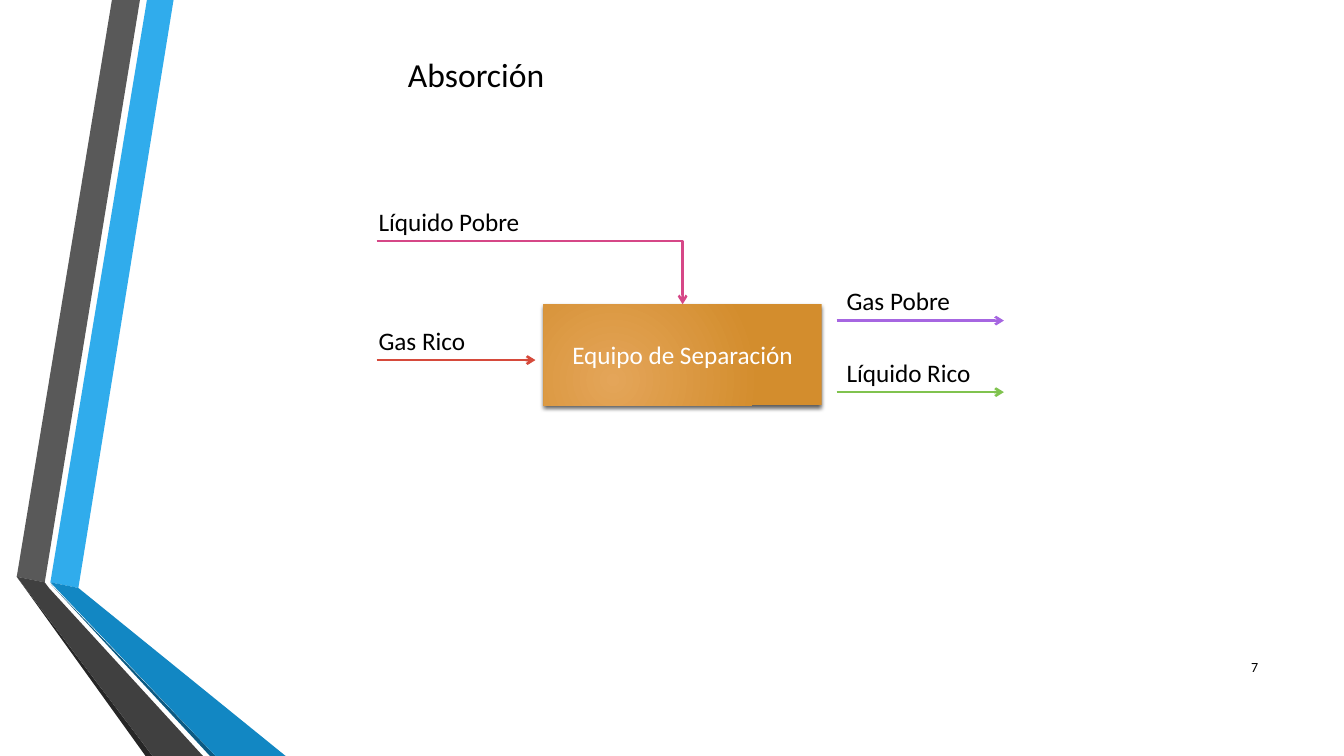
from lxml import etree
from pptx import Presentation
from pptx.dml.color import RGBColor
from pptx.enum import shapes, text
from pptx.oxml import ns
from pptx.util import Pt

WHITE = RGBColor(0xFF, 0xFF, 0xFF)
BLACK = RGBColor(0x00, 0x00, 0x00)
SKY = RGBColor(0x30, 0xAC, 0xEC)
BLUE = RGBColor(0x12, 0x87, 0xC3)
NAVY = RGBColor(0x0C, 0x5A, 0x82)
GREY = RGBColor(0x59, 0x59, 0x59)
DARK_GREY = RGBColor(0x40, 0x40, 0x40)
CHARCOAL = RGBColor(0x26, 0x26, 0x26)
LIGHT_ORANGE = RGBColor(0xE4, 0xA5, 0x59)
ORANGE = RGBColor(0xD3, 0x8D, 0x2D)
RED = RGBColor(0xD6, 0x4A, 0x3B)
PINK = RGBColor(0xD6, 0x47, 0x87)
PURPLE = RGBColor(0xA6, 0x66, 0xE1)
GREEN = RGBColor(0x80, 0xC3, 0x4F)

# Content: all lengths in points
FONT = "Calibri"
WIDTH, HEIGHT = 960, 540
RIBBONS = [
    (SKY, [(36, 416.5), (55.7, 420), (124.5, 0), (104.7, 0)]),
    (GREY, [(100, 0), (80, 0), (11.8, 412.5), (31.6, 415.5)]),
    (CHARCOAL, [(11.8, 412.5), (104.5, HEIGHT), (108.7, HEIGHT)]),
    (NAVY, [(36, 416.9), (149.8, HEIGHT), (154, HEIGHT)]),
    (BLUE, [(36, 416.5), (154, HEIGHT), (203.8, HEIGHT), (55.7, 420)]),
    (DARK_GREY, [(145.4, HEIGHT), (34.6, 420), (31.6, 415.5),
                 (11.8, 412.5), (108.7, HEIGHT)]),
]
UNIT = ("Equipo de Separación", 388.3, 217.4, 198.6, 72)
INLET_X, OUTLET_X = 269, 597.6
# Stream: name, colour, arrow start x, arrow y, arrow length, label x, label width
STREAMS = [
    ("Gas Rico", RED, INLET_X, 257.2, 113.5, 263.3, 118.8),
    ("Líquido Pobre", PINK, INLET_X, 172.1, None, 263.3, 198.6),
    ("Gas Pobre", PURPLE, OUTLET_X, 229, 119.5, OUTLET_X, 118.8),
    ("Líquido Rico", GREEN, OUTLET_X, 280.1, 119.5, OUTLET_X, 124.6),
]
LABEL_HEIGHT, LABEL_RISE = 29, 28.6
HEADINGS = [
    ("Absorción", 24, text.PP_ALIGN.CENTER, (244, 24.5, 192.2, 56.9)),
    ("7", 10, text.PP_ALIGN.RIGHT, (862.6, 462.2, 43.2, 28.8)),
]

deck = Presentation()
deck.slide_width, deck.slide_height = Pt(WIDTH), Pt(HEIGHT)
page = deck.slides.add_slide(deck.slide_layouts[6])


def add_xml(parent, tag, **values):
    """Append a drawing element with the given attributes."""
    child = etree.SubElement(parent, ns.qn(tag))
    for name, value in values.items():
        child.set(name, str(value))
    return child


def write(shape, words, size, colour, align, anchor):
    frame = shape.text_frame
    frame.word_wrap = True
    frame.vertical_anchor = anchor
    para = frame.paragraphs[0]
    para.alignment = align
    span = para.add_run()
    span.text = words
    for name, value in {"name": FONT, "size": Pt(size)}.items():
        setattr(span.font, name, value)
    span.font.color.rgb = colour


def add_arrow(kind, colour, *ends):
    arrow = page.shapes.add_connector(kind, *map(Pt, ends))
    arrow.line.color.rgb = colour
    arrow.line.width = Pt(1.75)
    add_xml(arrow.line._get_or_add_ln(), "a:tailEnd", type="arrow")
    add_xml(arrow._element.spPr, "a:effectLst")
    return arrow


# Folded ribbons on the left
for colour, (start, *others) in RIBBONS:
    builder = page.shapes.build_freeform(*start, scale=float(Pt(1)))
    builder.add_line_segments(others, close=True)
    ribbon = builder.convert_to_shape()
    ribbon.shadow.inherit = False
    ribbon.fill.solid()
    ribbon.fill.fore_color.rgb = colour
    ribbon.line.fill.background()

# Separation unit: radial gradient and soft shadow
unit_name, left, top, width, height = UNIT
box = page.shapes.add_shape(shapes.MSO_SHAPE.RECTANGLE,
                            *map(Pt, (left, top, width, height)))
box.line.fill.background()
box.fill.gradient()
for stop, colour in zip(box.fill.gradient_stops, (LIGHT_ORANGE, ORANGE)):
    stop.color.rgb = colour
properties = box._element.spPr
gradient = properties.find(ns.qn("a:gradFill"))
gradient.remove(gradient.find(ns.qn("a:lin")))
circle = add_xml(gradient, "a:path", path="circle")
add_xml(circle, "a:fillToRect", l=50000, t=100000, r=100000, b=50000)
box.shadow.inherit = False
shadow = add_xml(properties.find(ns.qn("a:effectLst")), "a:outerShdw",
                 blurRad=Pt(3), dist=Pt(2), dir=5400000, rotWithShape=0)
add_xml(add_xml(shadow, "a:srgbClr", val=BLACK), "a:alpha", val=64000)
write(box, unit_name, 18, WHITE, text.PP_ALIGN.CENTER, text.MSO_ANCHOR.MIDDLE)

# Streams: an arrow with its label above; the lean liquid drops into the unit
for name, colour, x, y, length, label_x, label_width in STREAMS:
    if length:
        add_arrow(shapes.MSO_CONNECTOR.STRAIGHT, colour, x, y, x + length, y)
    else:
        elbow = add_arrow(shapes.MSO_CONNECTOR.ELBOW, colour,
                          x, y, left + width / 2, top)
        elbow._element.spPr.find(ns.qn("a:prstGeom")).set("prst", "bentConnector2")
    label = page.shapes.add_textbox(
        *map(Pt, (label_x, y - LABEL_RISE, label_width, LABEL_HEIGHT)))
    write(label, name, 18, BLACK, text.PP_ALIGN.LEFT, text.MSO_ANCHOR.TOP)
    label.text_frame.auto_size = text.MSO_AUTO_SIZE.SHAPE_TO_FIT_TEXT

# Title and page number
for words, size, align, place in HEADINGS:
    heading = page.shapes.add_textbox(*map(Pt, place))
    write(heading, words, size, BLACK, align, text.MSO_ANCHOR.MIDDLE)

deck.save("out.pptx")
